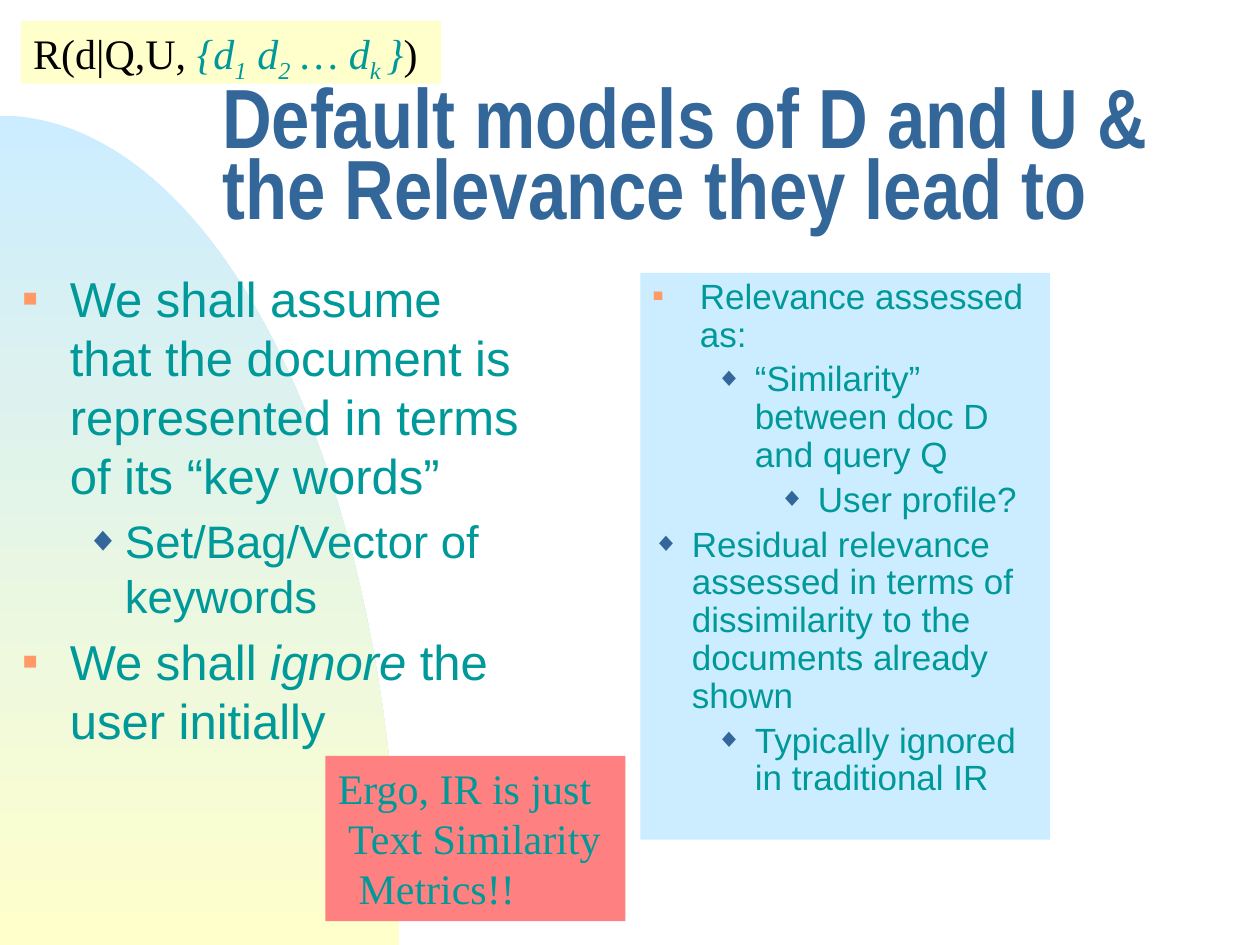
from math import cos, pi, sin

from lxml.etree import SubElement
from pptx import Presentation
from pptx.dml.color import RGBColor
from pptx.enum.text import MSO_ANCHOR
from pptx.oxml.ns import qn
from pptx.util import Cm, Pt

COLORS = {
    "title": "336699",
    "text": "009999",
    "black": "010000",
    "square": "FF9966",
    "diamond": "336699",
    "sky": "CCECFF",
    "cream": "FFFFCC",
    "coral": "FF8080",
}
# Bullet kind: character, colour, size in percent
BULLETS = {"square": ("■", "square", 50), "diamond": ("◆", "diamond", 75)}
# Level: bullet kind, left margin and hanging indent in cm
LEVELS = {
    "main": ("square", 0.95, 0.95),
    "plain": ("diamond", 0.79, 0.79),
    "sub": ("diamond", 2.06, 0.79),
    "subsub": ("diamond", 3.33, 0.79),
}
BODY = {"name": "Arial", "color": "text"}
SERIF = {"name": "Times New Roman", "size": Pt(24), "color": "text"}


def color(name):
    return RGBColor.from_string(COLORS[name])


def add_arc_panel(slide, width, top, bottom, steps=60):
    """Add a quarter ellipse at the left edge, filled from sky to cream."""
    height = bottom - top
    angles = [pi / 2 * step / steps for step in range(steps + 1)]
    points = [(Cm(width * sin(a)), Cm(bottom - height * cos(a))) for a in angles]
    builder = slide.shapes.build_freeform(*points[0])
    builder.add_line_segments(points[1:] + [(0, Cm(bottom))], close=True)
    shape = builder.convert_to_shape()
    shape.shadow.inherit = False
    shape.line.fill.background()
    shape.fill.gradient()
    shape.fill.gradient_angle = 270
    for stop, name in zip(shape.fill.gradient_stops, ("sky", "cream")):
        stop.color.rgb = color(name)


def add_text_box(slide, left, top, width, height, fill=None, wrap=True,
                 anchor=MSO_ANCHOR.TOP):
    shape = slide.shapes.add_textbox(Cm(left), Cm(top), Cm(width), Cm(height))
    if fill:
        shape.fill.solid()
        shape.fill.fore_color.rgb = color(fill)
    frame = shape.text_frame
    frame.word_wrap = wrap
    frame.vertical_anchor = anchor
    return frame


def next_paragraph(frame):
    """Return the first paragraph while it is empty, else a new one."""
    first = frame.paragraphs[0]
    return frame.add_paragraph() if first.runs else first


def add_run(paragraph, text, formats, subscript=False):
    run = paragraph.add_run()
    run.text = text
    for attribute, value in formats.items():
        if attribute == "color":
            run.font.color.rgb = color(value)
        else:
            setattr(run.font, attribute, value)
    if subscript:
        run._r.get_or_add_rPr().set("baseline", "-25000")


def set_indent(paragraph, margin, hanging=0):
    properties = paragraph._p.get_or_add_pPr()
    properties.set("marL", str(Cm(margin)))
    properties.set("indent", str(-Cm(hanging)))
    return properties


def add_bullet(frame, level, size, parts, line_spacing=1.0):
    """Add a bulleted paragraph; every second part is italic."""
    kind, margin, hanging = LEVELS[level]
    character, bullet_color, percent = BULLETS[kind]
    paragraph = next_paragraph(frame)
    paragraph.line_spacing = line_spacing
    paragraph.space_before = Pt(size * 0.2)
    properties = set_indent(paragraph, margin, hanging)
    bullet = SubElement(properties, qn("a:buClr"))
    SubElement(bullet, qn("a:srgbClr"), val=COLORS[bullet_color])
    SubElement(properties, qn("a:buSzPct"), val=str(percent * 1000))
    SubElement(properties, qn("a:buFont"), typeface="Arial")
    SubElement(properties, qn("a:buChar"), char=character)
    for index, text in enumerate(parts):
        add_run(paragraph, text, {**BODY, "size": Pt(size), "italic": index % 2 == 1})


def add_title(slide):
    frame = add_text_box(slide, 4.23, 1.69, 19.69, 3.18, anchor=MSO_ANCHOR.MIDDLE)
    paragraph = frame.paragraphs[0]
    paragraph.line_spacing = 0.7
    add_run(paragraph, "Default models of D and U & the Relevance they lead to",
            {"name": "Arial Narrow", "size": Pt(48), "bold": True, "color": "title"})


def add_assumptions(slide):
    frame = add_text_box(slide, 0.21, 5.29, 10.8, 11.43)
    add_bullet(frame, "main", 28, [
        "We shall assume that the document is represented in terms of its “key words”"])
    add_bullet(frame, "sub", 26, ["Set/Bag/Vector of keywords"])
    add_bullet(frame, "main", 28, ["We shall ", "ignore", " the user initially"])


def add_relevance(slide):
    frame = add_text_box(slide, 12.91, 5.5, 8.26, 11.43, fill="sky")
    for level, text in (
        ("main", "Relevance assessed as:"),
        ("sub", "“Similarity” between doc D and query Q"),
        ("subsub", "User profile?"),
        ("plain", "Residual relevance assessed in terms of dissimilarity "
                  "to the documents already shown"),
        ("sub", "Typically ignored in traditional IR"),
    ):
        add_bullet(frame, level, 20, [text], line_spacing=0.9)


def add_formula(slide):
    frame = add_text_box(slide, 0.42, 0.42, 8.47, 1.27, fill="cream", wrap=False)
    paragraph = frame.paragraphs[0]
    upright = {**SERIF, "color": "black"}
    add_run(paragraph, "R(d|Q,U,", upright)
    for base, index in ((" {d", "1"), (" d", "2"), (" … d", "k "), ("}", "")):
        add_run(paragraph, base, {**SERIF, "italic": True})
        if index:
            add_run(paragraph, index, {**SERIF, "italic": True}, subscript=True)
    add_run(paragraph, ")", upright)


def add_conclusion(slide):
    frame = add_text_box(slide, 6.56, 15.24, 6.05, 3.33, fill="coral", wrap=False)
    for step, text in enumerate(("Ergo, IR is just", "Text Similarity", "Metrics!!")):
        paragraph = next_paragraph(frame)
        set_indent(paragraph, 0.21 * step)
        add_run(paragraph, text, SERIF)


def main():
    presentation = Presentation()
    presentation.slide_width, presentation.slide_height = Cm(25.4), Cm(19.05)
    slide = presentation.slides.add_slide(presentation.slide_layouts[6])
    add_arc_panel(slide, width=8.05, top=2.33, bottom=19.05)
    add_title(slide)
    add_assumptions(slide)
    add_relevance(slide)
    add_formula(slide)
    add_conclusion(slide)
    presentation.save("out.pptx")


if __name__ == "__main__":
    main()
